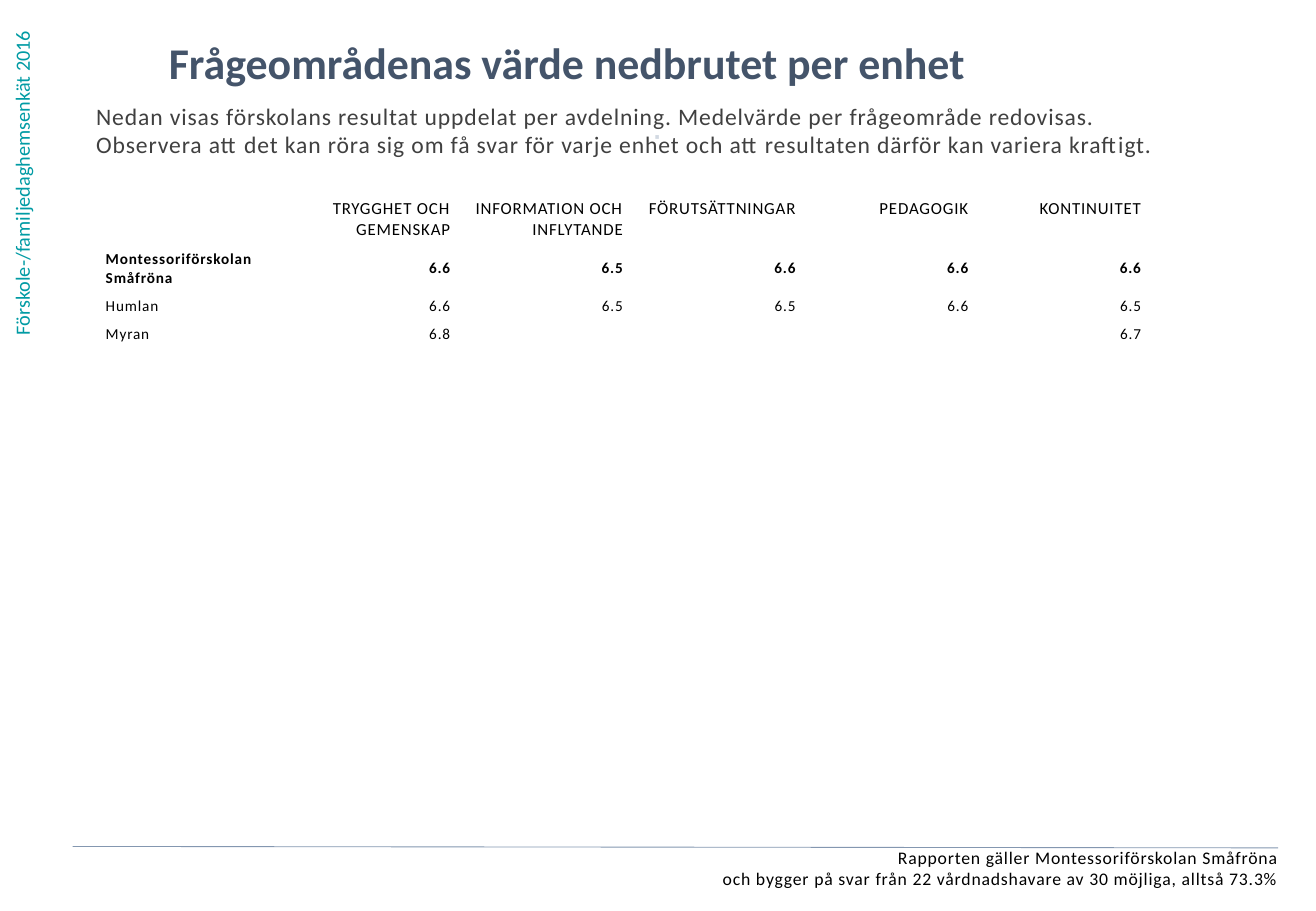
import dataclasses

import pptx
import pptx.dml.color
import pptx.enum.shapes
import pptx.enum.text
import pptx.oxml
import pptx.oxml.ns
import pptx.util
from lxml import etree

Cm = pptx.util.Cm
Pt = pptx.util.Pt
qn = pptx.oxml.ns.qn
ALIGN = pptx.enum.text.PP_ALIGN
ANCHOR = pptx.enum.text.MSO_ANCHOR


@dataclasses.dataclass(frozen=True)
class Theme:
    font: str = "Calibri"
    white: str = "FFFFFF"
    black: str = "000000"
    grey: str = "404040"
    navy: str = "44546A"
    teal: str = "009BA4"
    pale: str = "D2D9E2"
    rule: str = "8497B0"
    title: float = 26
    intro: float = 14
    side: float = 12
    foot: float = 10.5
    head: float = 10
    body: float = 9


THEME = Theme()
SCHOOL = "Montessoriförskolan Småfröna"
ROWS = [
    ["", "TRYGGHET OCH GEMENSKAP", "INFORMATION OCH INFLYTANDE",
     "FÖRUTSÄTTNINGAR", "PEDAGOGIK", "KONTINUITET", ""],
    [SCHOOL, "6.6", "6.5", "6.6", "6.6", "6.6", ""],
    ["Humlan", "6.6", "6.5", "6.5", "6.6", "6.5", ""],
    ["Myran", "6.8", "", "", "", "6.7", ""],
]
HEIGHTS = [1.07, 0.98, 0.58, 0.58]


def rgb(code):
    return pptx.dml.color.RGBColor.from_string(code)


def write(frame, text, size, color=THEME.black, bold=False, align=ALIGN.LEFT, space=0.5):
    """Fill a frame with one paragraph per line; space is letter spacing in points."""
    frame.text = text
    for para in frame.paragraphs:
        para.alignment = align
        for run in para.runs:
            font = run.font
            font.name, font.size, font.bold = THEME.font, Pt(size), bold
            font.color.rgb = rgb(color)
            if space:
                run._r.get_or_add_rPr().set("spc", str(int(space * 100)))
        if not para.runs:
            etree.SubElement(para._p, qn("a:endParaRPr"), sz=str(int(size * 100)))


def inset(frame, side, top):
    frame.margin_left = frame.margin_right = Cm(side)
    frame.margin_top = frame.margin_bottom = Cm(top)


def label(slide, area, text, size, **style):
    box = slide.shapes.add_textbox(*map(Cm, area))
    frame = box.text_frame
    frame.word_wrap = True
    inset(frame, 0, 0)
    write(frame, text, size, **style)
    return frame


def side(slide, text):
    """Text along the left edge, read from bottom to top."""
    frame = label(slide, (-0.05, 0, 1.02, 7.14), text, THEME.side,
                  color=THEME.teal, space=0)
    inset(frame, 0.25, 0.13)
    frame._txBody.bodyPr.set("vert", "vert270")


def title(slide, text):
    shape = slide.shapes.title
    shape.left, shape.top, shape.width, shape.height = map(Cm, (3.53, 0.74, 21.18, 1.45))
    frame = shape.text_frame
    frame.auto_size = pptx.enum.text.MSO_AUTO_SIZE.NONE
    frame.vertical_anchor = ANCHOR.TOP
    inset(frame, 0, 0)
    write(frame, text, THEME.title, color=THEME.navy, bold=True, space=0)


def scores(slide):
    wide = [3.99] + [3.61] * 6
    table = slide.shapes.add_table(
        len(ROWS), len(wide), Cm(2.01), Cm(4.06), Cm(sum(wide)), Cm(sum(HEIGHTS))).table
    table.first_row = table.horz_banding = False
    for col, width in zip(table.columns, wide):
        col.width = Cm(width)
    for r, (row, high) in enumerate(zip(ROWS, HEIGHTS)):
        table.rows[r].height = Cm(high)
        for c, text in enumerate(row):
            cell = table.cell(r, c)
            cell.fill.solid()
            cell.fill.fore_color.rgb = rgb(THEME.white)
            inset(cell, 0.2, 0.1)
            cell.vertical_anchor = ANCHOR.MIDDLE if r else ANCHOR.TOP
            write(cell.text_frame, text, THEME.body if r else THEME.head,
                  bold=r == 1, align=ALIGN.RIGHT if c else ALIGN.LEFT)


def rule(slide, start, end):
    line = slide.shapes.add_connector(
        pptx.enum.shapes.MSO_CONNECTOR.STRAIGHT, *map(Cm, start + end))
    line.line.color.rgb = rgb(THEME.rule)
    line.line.width = Pt(0.5)
    etree.SubElement(line._element.spPr, qn("a:effectLst"))


def main():
    deck = pptx.Presentation()
    deck.slide_width, deck.slide_height = Cm(27.51), Cm(19.05)
    slide = deck.slides.add_slide(deck.slide_layouts[5])
    side(slide, "Förskole-/familjedaghemsenkät 2016")
    title(slide, "Frågeområdenas värde nedbrutet per enhet")
    label(slide, (2.01, 2.13, 24.03, 2.57),
          "Nedan visas förskolans resultat uppdelat per avdelning. "
          "Medelvärde per frågeområde redovisas.\n"
          "Observera att det kan röra sig om få svar för varje enhet "
          "och att resultaten därför kan variera kraftigt.",
          THEME.intro, color=THEME.grey)
    label(slide, (0.3, 17.7, 26.42, 1.09),
          f"Rapporten gäller {SCHOOL}\n"
          "och bygger på svar från 22 vårdnadshavare av 30 möjliga, alltså 73.3%",
          THEME.foot, align=ALIGN.RIGHT)
    label(slide, (9.83, 2.59, 7.82, 0.99), "⋅", THEME.side,
          color=THEME.pale, bold=True, align=ALIGN.CENTER)
    scores(slide)
    rule(slide, (1.52, 17.7), (26.72, 17.73))
    deck.save("out.pptx")


if __name__ == "__main__":
    main()
